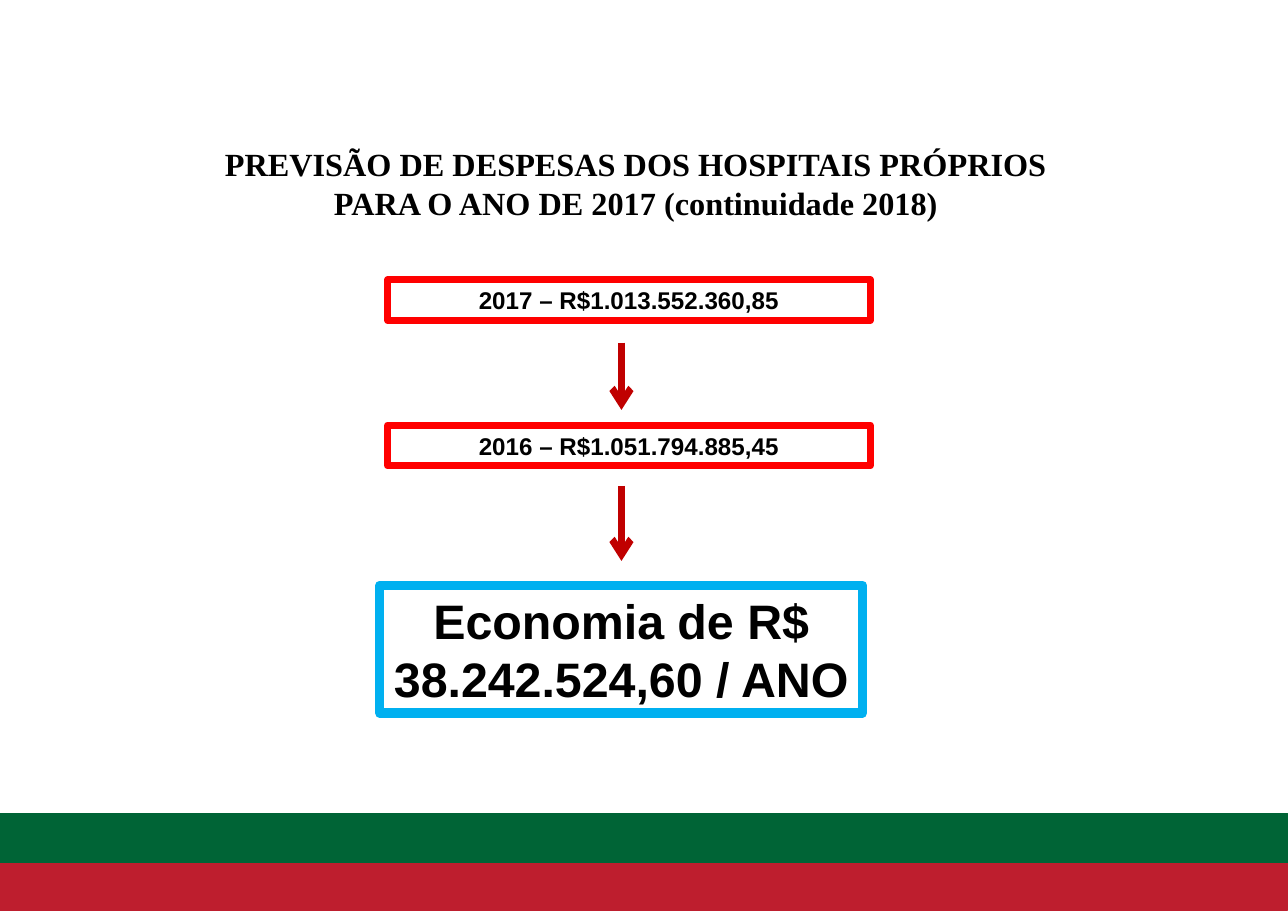
from dataclasses import dataclass

from lxml.etree import SubElement
from pptx import Presentation
from pptx.dml.color import RGBColor as RGB
from pptx.enum.shapes import MSO_CONNECTOR as Connector, MSO_SHAPE as Shape
from pptx.enum.text import MSO_ANCHOR as Anchor, PP_ALIGN as Align
from pptx.oxml.ns import qn
from pptx.util import Cm, Pt


@dataclass(frozen=True)
class Theme:
    ink: str = "000000"
    green: str = "006436"
    crimson: str = "BE1E2E"
    amount_border: str = "FF0000"
    saving_border: str = "00B0F0"
    arrow: str = "C00000"
    title_font: str = "Times New Roman"
    body_font: str = "Arial"
    title_size: float = 21.1
    amount_size: float = 15.8
    saving_size: float = 31.6


def write(frame, text, *, font, size, color, bold=True, align=Align.CENTER):
    frame.word_wrap = True
    frame.vertical_anchor = Anchor.MIDDLE
    paragraph = frame.paragraphs[0]
    paragraph.alignment = align
    run = paragraph.add_run()
    run.text = text
    run.font.name = font
    run.font.size = Pt(size)
    run.font.bold = bold
    run.font.color.rgb = RGB.from_string(color)


class SlideBuilder:
    """Draws on one slide in the theme's style; lengths are in centimetres."""

    def __init__(self, slide, theme):
        self.shapes = slide.shapes
        self.theme = theme

    def rectangle(self, left, top, width, height, border, weight, fill=None):
        rectangle = self.shapes.add_shape(
            Shape.RECTANGLE, Cm(left), Cm(top), Cm(width), Cm(height))
        rectangle.shadow.inherit = False
        if fill:
            rectangle.fill.solid()
            rectangle.fill.fore_color.rgb = RGB.from_string(fill)
        else:
            rectangle.fill.background()
        rectangle.line.color.rgb = RGB.from_string(border)
        rectangle.line.width = Pt(weight)
        return rectangle

    def band(self, top, color):
        self.rectangle(0, top, 29.7, 1.14, color, 0.75, fill=color)

    def title(self, text, left, top, width, height):
        title = self.shapes.add_textbox(Cm(left), Cm(top), Cm(width), Cm(height))
        write(title.text_frame, text, font=self.theme.title_font,
              size=self.theme.title_size, color=self.theme.ink)

    def framed_text(self, text, left, top, height, border, weight, size):
        frame = self.rectangle(left, top, 11.13, height, border, weight)
        write(frame.text_frame, text, font=self.theme.body_font,
              size=size, color=self.theme.ink)

    def amount(self, text, top):
        self.framed_text(text, 8.94, top, 0.94, self.theme.amount_border,
                         4.5, self.theme.amount_size)

    def saving(self, text, top):
        self.framed_text(text, 8.76, top, 2.95, self.theme.saving_border,
                         6, self.theme.saving_size)

    def down_arrow(self, top, bottom, x=14.33):
        arrow = self.shapes.add_connector(
            Connector.STRAIGHT, Cm(x), Cm(top), Cm(x), Cm(bottom))
        arrow.line.color.rgb = RGB.from_string(self.theme.arrow)
        arrow.line.width = Pt(4.5)
        SubElement(arrow.line._get_or_add_ln(), qn("a:tailEnd"), type="arrow")
        SubElement(arrow._element.spPr, qn("a:effectLst"))


def main():
    deck = Presentation()
    deck.slide_width, deck.slide_height = Cm(29.7), Cm(21)
    theme = Theme()
    page = SlideBuilder(deck.slides.add_slide(deck.slide_layouts[6]), theme)

    page.band(19.84, theme.crimson)
    page.band(18.75, theme.green)
    page.title("PREVISÃO DE DESPESAS DOS HOSPITAIS PRÓPRIOS "
               "PARA O ANO DE 2017 (continuidade 2018)", 4.75, 3.2, 19.84, 2.06)
    page.amount("2017 – R$1.013.552.360,85", 6.45)
    page.down_arrow(7.9, 9.45)
    page.amount("2016 – R$1.051.794.885,45", 9.8)
    page.down_arrow(11.2, 12.93)
    page.saving("Economia de R$ 38.242.524,60 / ANO", 13.49)

    deck.save("out.pptx")


if __name__ == "__main__":
    main()
